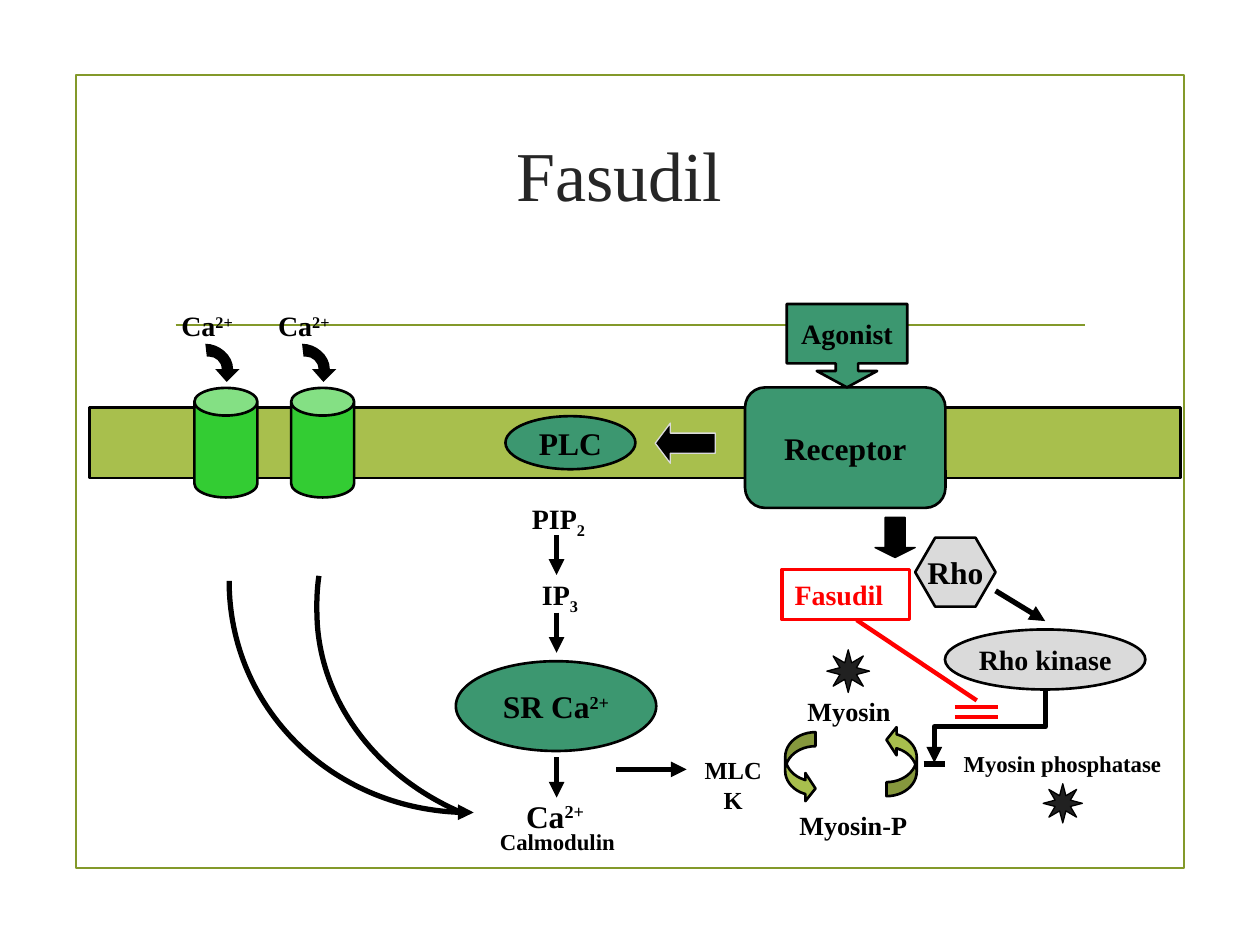
"""Build the Fasudil smooth-muscle signalling slide."""
import lxml.etree
import pptx
import pptx.dml.color
import pptx.enum.shapes
import pptx.enum.text
import pptx.oxml
import pptx.oxml.ns
import pptx.util

Cm = pptx.util.Cm
Pt = pptx.util.Pt
RGBColor = pptx.dml.color.RGBColor
Shape = pptx.enum.shapes.MSO_SHAPE
Connector = pptx.enum.shapes.MSO_CONNECTOR
Align = pptx.enum.text.PP_ALIGN
Anchor = pptx.enum.text.MSO_ANCHOR

BLACK = RGBColor(0x00, 0x00, 0x00)
TITLE_GRAY = RGBColor(0x26, 0x26, 0x26)
STAR_GRAY = RGBColor(0x21, 0x21, 0x21)
LIGHT_GRAY = RGBColor(0xDA, 0xDA, 0xDA)
OLIVE = RGBColor(0x83, 0x99, 0x2A)
MEMBRANE_GREEN = RGBColor(0xA8, 0xBF, 0x4D)
CHANNEL_GREEN = RGBColor(0x33, 0xCC, 0x33)
PROTEIN_GREEN = RGBColor(0x3C, 0x97, 0x70)
RED = RGBColor(0xFF, 0x00, 0x00)

SUPERSCRIPT, SUBSCRIPT = 30000, -25000
CALCIUM = [("Ca", 0), ("2+", SUPERSCRIPT)]
CHANNEL_PITCH = 1.95
CASCADE_X = 11.22


def write_text(shape, runs, size, color=BLACK, bold=True, align=Align.CENTER, wrap=False,
               inset=None, anchor=Anchor.MIDDLE):
    frame = shape.text_frame
    frame_format = {"word_wrap": wrap, "vertical_anchor": anchor}
    if inset is not None:
        sides = ("left", "right", "top", "bottom")
        frame_format.update({f"margin_{side}": Cm(inset) for side in sides})
    for name, value in frame_format.items():
        setattr(frame, name, value)
    paragraph = frame.paragraphs[0]
    paragraph.alignment = align
    font_format = {"name": "Times New Roman", "size": Pt(size), "bold": bold}
    for text, baseline in [(runs, 0)] if isinstance(runs, str) else runs:
        run = paragraph.add_run()
        run.text = text
        for name, value in font_format.items():
            setattr(run.font, name, value)
        run.font.color.rgb = color
        if baseline:
            run.font._element.set("baseline", str(baseline))


def add_label(slide, box, runs, size, **text_format):
    label = slide.shapes.add_textbox(*map(Cm, box))
    write_text(label, runs, size, **{"inset": 0, "anchor": Anchor.TOP, **text_format})


def paint(shape, fill, line, width):
    shape.shadow.inherit = False
    if fill is None:
        shape.fill.background()
    else:
        shape.fill.solid()
        shape.fill.fore_color.rgb = fill
    if line is None:
        shape.line.fill.background()
    else:
        shape.line.color.rgb = line
        shape.line.width = Pt(width)


def add_figure(slide, kind, box, fill=None, line=BLACK, width=1.5, adjustments=(), rotation=0):
    shape = slide.shapes.add_shape(kind, *map(Cm, box))
    for index, value in enumerate(adjustments):
        shape.adjustments[index] = value
    shape.rotation = rotation
    paint(shape, fill, line, width)
    return shape


def add_arrowhead(shape, end):
    outline = shape._element.spPr.find(pptx.oxml.ns.qn("a:ln"))
    namespace = pptx.oxml.ns.nsdecls("a")
    outline.append(pptx.oxml.parse_xml(f'<a:{end} {namespace} type="triangle"/>'))


def add_line(slide, start, end, color=BLACK, width=3, arrow=None, kind=Connector.STRAIGHT):
    line = slide.shapes.add_connector(kind, *map(Cm, (*start, *end)))
    line.line.color.rgb = color
    line.line.width = Pt(width)
    if arrow:
        add_arrowhead(line, arrow)
    effects = f'<a:effectLst {pptx.oxml.ns.nsdecls("a")}/>'
    line._element.spPr.append(pptx.oxml.parse_xml(effects))
    return line


def add_outline(slide, start, segments, fill=None, line=BLACK, closed=False):
    """Draw an outline whose one-point segments are straight and three-point segments are cubic."""
    qn = pptx.oxml.ns.qn
    points = [(Cm(x), Cm(y)) for segment in segments for x, y in segment]
    builder = slide.shapes.build_freeform(Cm(start[0]), Cm(start[1]))
    builder.add_line_segments(points, close=closed)
    shape = builder.convert_to_shape()
    straight = iter(list(shape._element.iter(qn("a:lnTo"))))
    for segment in segments:
        nodes = [next(straight) for _ in segment]
        if len(nodes) == 3:
            curve = lxml.etree.Element(qn("a:cubicBezTo"))
            nodes[0].addprevious(curve)
            for node in nodes:
                curve.append(node[0])
                node.getparent().remove(node)
    paint(shape, fill, line, 3)
    return shape


def add_channel(slide, offset):
    add_figure(slide, Shape.CAN, (3.92 + offset, 7.82, 1.27, 2.21), CHANNEL_GREEN, adjustments=[0.44])
    add_label(slide, (3.59 + offset, 6.22, 1.17, 0.69), CALCIUM, 16)
    segments = [
        [(4.47, 7.29), (4.34, 7.19), (4.22, 7.19)],
        [(4.17, 7.19)],
        [(4.14, 6.93)],
        [(4.42, 6.93), (4.7, 7.16), (4.7, 7.44)],
        [(4.83, 7.44)],
        [(4.57, 7.7)],
        [(4.34, 7.44)],
    ]
    shifted = [[(x + offset, y) for x, y in segment] for segment in segments]
    add_outline(slide, (4.47 + offset, 7.44), shifted, BLACK, None, closed=True)


def add_proteins(slide):
    callout = [0.268, 0.362, 0.196, 0.712]
    hexagon = [0.29, 1.155]
    for kind, box, fill, runs, size, adjustments in (
        (Shape.OVAL, (10.19, 8.39, 2.62, 1.07), PROTEIN_GREEN, "PLC", 18, ()),
        (Shape.OVAL, (9.19, 13.33, 4.04, 1.81), PROTEIN_GREEN,
         [("SR Ca", 0), ("2+", SUPERSCRIPT)], 18, ()),
        (Shape.ROUNDED_RECTANGLE, (15.02, 7.81, 4.04, 2.43), PROTEIN_GREEN, "Receptor", 18, ()),
        (Shape.DOWN_ARROW_CALLOUT, (15.86, 6.13, 2.43, 1.68), PROTEIN_GREEN, "Agonist", 16, callout),
        (Shape.HEXAGON, (18.45, 10.84, 1.62, 1.39), LIGHT_GRAY, "Rho", 18, hexagon),
        (Shape.OVAL, (19.05, 12.69, 4.04, 1.21), LIGHT_GRAY, "Rho kinase", 16, ()),
    ):
        write_text(add_figure(slide, kind, box, fill, adjustments=adjustments), runs, size)


def add_block_arrows(slide):
    add_figure(slide, Shape.LEFT_ARROW, (13.21, 8.53, 1.21, 0.81), BLACK, LIGHT_GRAY, 0.75, [0.5, 0.376])
    add_figure(slide, Shape.LEFT_ARROW, (17.64, 10.43, 0.81, 0.81), BLACK, BLACK, 0.75, [0.5, 0.25], 270)
    for left, top, rotation in ((15.83, 14.76, 0), (17.87, 14.63, 180)):
        add_figure(slide, Shape.CURVED_RIGHT_ARROW, (left, top, 0.61, 1.42), MEMBRANE_GREEN,
                   adjustments=[0.465, 0.93, 0.333], rotation=rotation)
    for left, top, side in ((16.67, 13.1, 0.86), (21.03, 15.8, 0.79)):
        add_figure(slide, Shape.STAR_8_POINT, (left, top, side, side), STAR_GRAY, width=0.75, adjustments=[0.21])


def add_labels(slide):
    for box, runs, size in (
        ((16.2, 14.02, 1.83, 0.64), "Myosin", 15),
        ((16.02, 16.31, 2.36, 0.64), "Myosin-P", 15),
        ((19.13, 15.11, 4.57, 0.56), "Myosin phosphatase", 13),
        ((10.7, 10.11, 1.12, 0.69), [("PIP", 0), ("2", SUBSCRIPT)], 16),
        ((10.91, 11.64, 0.76, 0.69), [("IP", 0), ("3", SUBSCRIPT)], 16),
        ((10.54, 16.06, 1.3, 0.76), CALCIUM, 18),
        ((9.98, 16.69, 2.51, 0.56), "Calmodulin", 13),
    ):
        add_label(slide, box, runs, size)
    add_label(slide, (14.07, 15.23, 1.42, 0.58), "MLCK", 14, wrap=True)


def add_pathways(slide):
    for top, bottom in ((10.79, 11.59), (12.35, 13.16), (15.27, 16.08)):
        add_line(slide, (CASCADE_X, top), (CASCADE_X, bottom), arrow="tailEnd")
    add_line(slide, (12.42, 15.51), (13.84, 15.51), arrow="tailEnd")
    influx = add_outline(slide, (9.55, 16.38), [
        [(9.52, 16.38), (9.48, 16.38), (9.45, 16.38)],
        [(6.78, 16.38), (4.62, 14.27), (4.62, 11.71)],
    ])
    add_arrowhead(influx, "headEnd")
    add_outline(slide, (9.3, 16.38), [
        [(7.65, 15.67), (6.53, 14.25), (6.4, 12.62)],
        [(6.38, 12.29), (6.38, 11.94), (6.43, 11.61)],
    ])
    add_line(slide, (18.62, 15.4), (19.05, 15.4))
    add_line(slide, (20.07, 11.91), (21.07, 12.52), arrow="tailEnd")
    elbow = add_line(slide, (19.23, 13.53), (20.68, 15.77), arrow="headEnd", kind=Connector.ELBOW)
    elbow._element.spPr.xfrm.set("rot", str(270 * 60000))


def add_inhibitor(slide):
    box = add_figure(slide, Shape.RECTANGLE, (15.77, 11.48, 2.57, 1.01), line=RED, width=2)
    write_text(box, "Fasudil", 16, RED, align=Align.LEFT, wrap=True)
    add_line(slide, (17.27, 12.5), (19.69, 14.12), RED, 2.5)
    for y in (14.25, 14.45):
        add_line(slide, (19.25, y), (20.11, y), RED, 2)


def main():
    presentation = pptx.Presentation()
    presentation.slide_width, presentation.slide_height = Cm(25.4), Cm(19.05)
    slide = presentation.slides.add_slide(presentation.slide_layouts[6])
    add_figure(slide, Shape.RECTANGLE, (1.53, 1.51, 22.34, 15.99), line=OLIVE, width=1.25)
    add_line(slide, (3.54, 6.55), (21.88, 6.55), OLIVE, 1.25)
    add_label(slide, (1.05, 2.54, 22.86, 1.9), "Fasudil", 40, color=TITLE_GRAY, bold=False,
              wrap=True, anchor=Anchor.MIDDLE)
    add_figure(slide, Shape.RECTANGLE, (1.8, 8.22, 22, 1.42), MEMBRANE_GREEN)
    for index in range(2):
        add_channel(slide, index * CHANNEL_PITCH)
    add_proteins(slide)
    add_block_arrows(slide)
    add_labels(slide)
    add_pathways(slide)
    add_inhibitor(slide)
    presentation.save("out.pptx")


if __name__ == "__main__":
    main()
